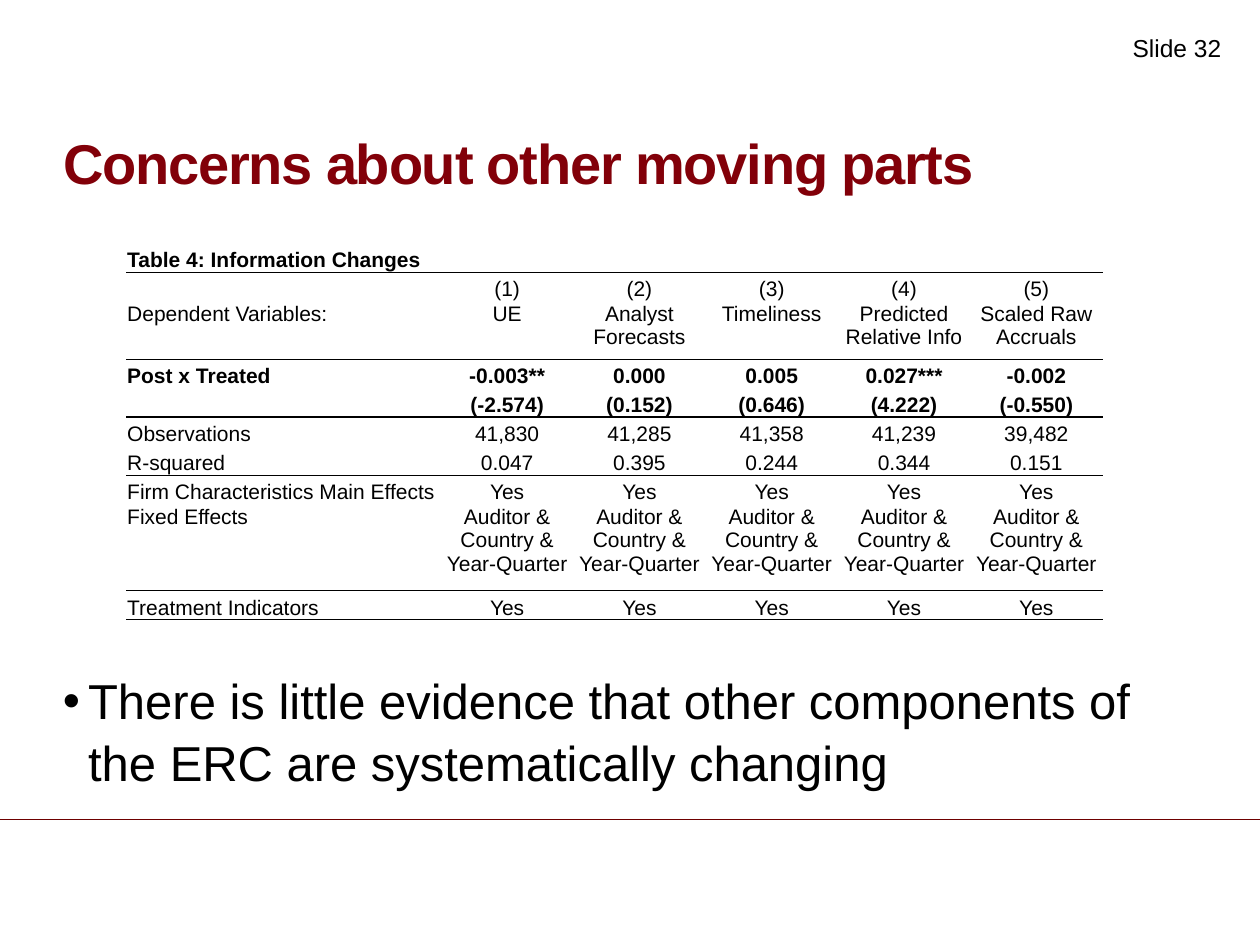
from dataclasses import dataclass

from lxml.etree import SubElement
from pptx import Presentation
from pptx.dml.color import RGBColor
from pptx.enum.shapes import MSO_CONNECTOR
from pptx.enum.text import MSO_ANCHOR, PP_ALIGN
from pptx.oxml import parse_xml
from pptx.oxml.ns import nsdecls, qn
from pptx.util import Pt

PX = 9144  # 100 px to the inch
FONT = "Arial"
INK = {"text": "000000", "title": "820009", "rule": "6E0000"}
PLAIN = "{2D5ABB26-0587-4C30-8999-92F81FD0307C}"  # no style, no grid
COLS = [250] + [105] * 5


@dataclass
class Row:
    label: str
    vals: list[str]
    high: int = 23
    bold: bool = False
    top: bool = False
    rule: float = 0  # bottom border in points


YES = ["Yes"] * 5
ROWS = [
    Row("Table 4: Information Changes", [""] * 5, high=28, bold=True, rule=0.5),
    Row("", [f"({n})" for n in range(1, 6)]),
    Row("Dependent Variables:",
        ["UE", "Analyst Forecasts", "Timeliness", "Predicted Relative Info",
         "Scaled Raw Accruals"], high=46, top=True, rule=0.5),
    Row("Post x Treated", ["-0.003**", "0.000", "0.005", "0.027***", "-0.002"],
        bold=True),
    Row("", ["(-2.574)", "(0.152)", "(0.646)", "(4.222)", "(-0.550)"],
        bold=True, rule=1),
    Row("Observations", ["41,830", "41,285", "41,358", "41,239", "39,482"]),
    Row("R-squared", ["0.047", "0.395", "0.244", "0.344", "0.151"], rule=0.5),
    Row("Firm Characteristics Main Effects", YES),
    Row("Fixed Effects", ["Auditor & Country & Year-Quarter"] * 5,
        high=69, top=True, rule=0.5),
    Row("Treatment Indicators", YES, rule=0.5),
]


def write(frame, text: str, *, size: float, ink: str = "text", bold: bool = False,
          align=PP_ALIGN.LEFT, lead: float = 1, track: int = 0,
          bullet: int = 0) -> None:
    """Fill a text frame with one formatted paragraph."""
    frame.word_wrap = True
    para = frame.paragraphs[0]
    if bullet:
        ppr = para._p.get_or_add_pPr()
        ppr.set("marL", str(bullet * PX))
        ppr.set("indent", str(-bullet * PX))
        SubElement(ppr, qn("a:buFont"), typeface=FONT)
        SubElement(ppr, qn("a:buChar"), char="•")
    para.alignment = align
    para.line_spacing = lead
    if not text:  # keep an empty cell as low as its row
        SubElement(para._p, qn("a:endParaRPr"), sz=str(int(size * 100)))
        return
    run = para.add_run()
    run.text = text
    font = run.font
    font.name, font.size, font.bold = FONT, Pt(size), bold
    font.color.rgb = RGBColor.from_string(INK[ink])
    if track:
        run._r.get_or_add_rPr().set("spc", str(track))


def place(shape, x: int, y: int, w: int, h: int) -> None:
    shape.left, shape.top, shape.width, shape.height = (n * PX for n in (x, y, w, h))


def inset(frame) -> None:
    frame.margin_left = frame.margin_right = 0
    frame.margin_top = frame.margin_bottom = 0


def box(slide, x: int, y: int, w: int, h: int):
    return slide.shapes.add_textbox(x * PX, y * PX, w * PX, h * PX).text_frame


def fill(cell, row: Row, text: str, align) -> None:
    """Format one table cell with its bottom rule."""
    cell.margin_left = cell.margin_right = cell.margin_top = PX
    cell.margin_bottom = 0
    cell.vertical_anchor = MSO_ANCHOR.TOP if row.top else MSO_ANCHOR.BOTTOM
    cell.fill.background()
    write(cell.text_frame, text, size=12, bold=row.bold, align=align)
    if row.rule:
        cell._tc.get_or_add_tcPr().insert(0, parse_xml(
            f'<a:lnB {nsdecls("a")} w="{Pt(row.rule)}"><a:solidFill>'
            f'<a:srgbClr val="{INK["text"]}"/></a:solidFill></a:lnB>'))


def grid(slide, x: int, y: int) -> None:
    high = sum(row.high for row in ROWS)
    table = slide.shapes.add_table(len(ROWS), len(COLS), x * PX, y * PX,
                                   sum(COLS) * PX, high * PX).table
    table.first_row = table.horz_banding = False
    table._tbl.tblPr.find(qn("a:tableStyleId")).text = PLAIN
    for col, wide in zip(table.columns, COLS):
        col.width = wide * PX
    for r, row in enumerate(ROWS):
        table.rows[r].height = row.high * PX
        for c, text in enumerate([row.label, *row.vals]):
            fill(table.cell(r, c), row, text,
                 PP_ALIGN.CENTER if c else PP_ALIGN.LEFT)
    table.cell(0, 0).merge(table.cell(0, 1))


def main() -> None:
    deck = Presentation()
    deck.slide_width, deck.slide_height = 1000 * PX, 750 * PX
    slide = deck.slides.add_slide(deck.slide_layouts[5])

    # Footer rule
    line = slide.shapes.add_connector(MSO_CONNECTOR.STRAIGHT, 0, 650 * PX,
                                      1000 * PX, 650 * PX)
    line.line.color.rgb = RGBColor.from_string(INK["rule"])
    line.line.width = Pt(0.25)
    SubElement(line._element.spPr, qn("a:effectLst"))

    # Slide number
    write(box(slide, 889, 21, 111, 52), "Slide 32", size=14)

    # Title
    title = slide.shapes.title
    place(title, 50, 29, 900, 127)
    inset(title.text_frame)
    title.text_frame.vertical_anchor = MSO_ANCHOR.BOTTOM
    write(title.text_frame, "Concerns about other moving parts", size=32,
          ink="title", bold=True, lead=0.9, track=-70)

    # Results table
    grid(slide, 100, 188)

    # Takeaway
    body = box(slide, 50, 530, 900, 102)
    inset(body)
    write(body, "There is little evidence that other components of the ERC "
          "are systematically changing", size=28, lead=1.05, bullet=20)

    deck.save("out.pptx")


if __name__ == "__main__":
    main()
